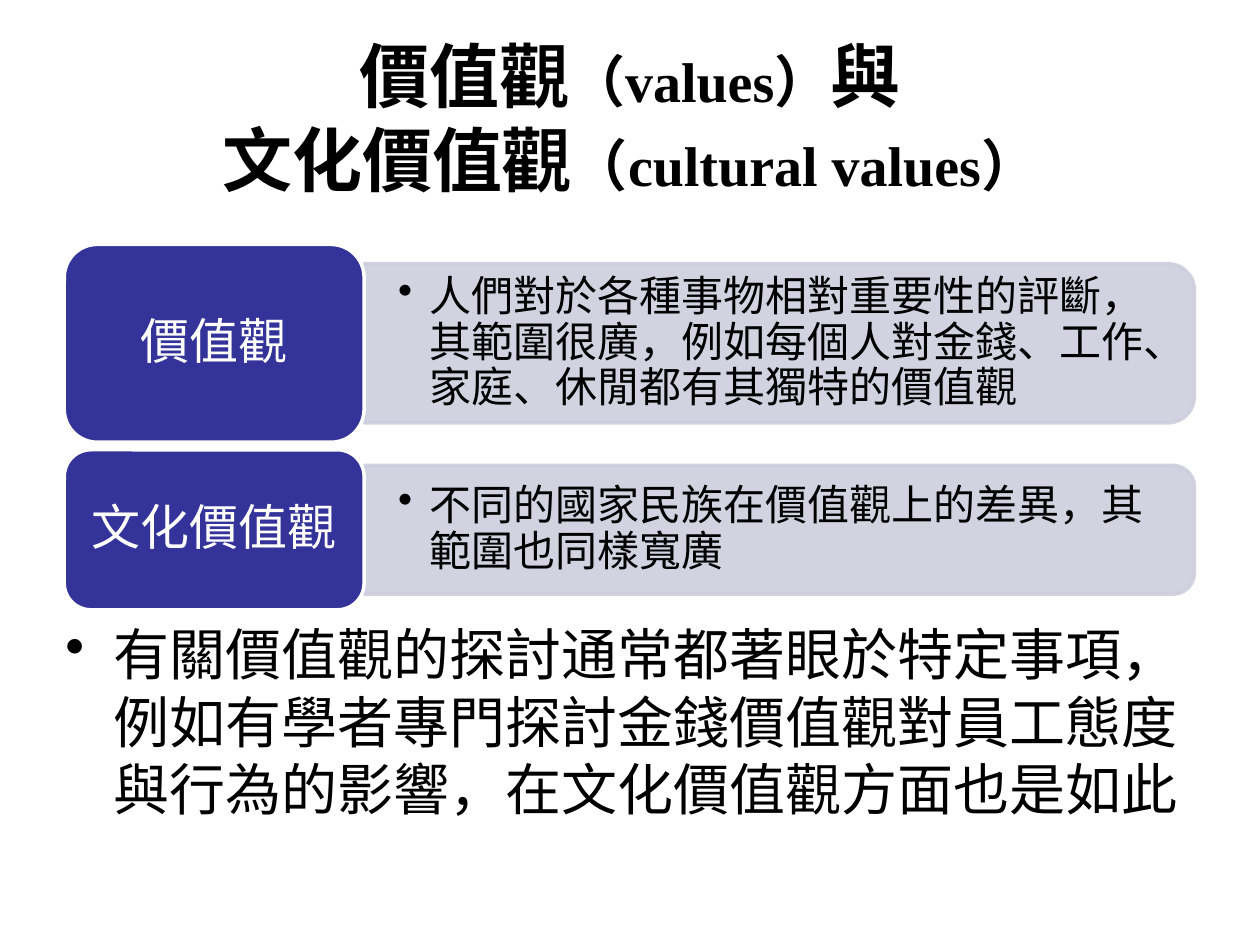
from pptx import Presentation
from pptx.dml.color import RGBColor
from pptx.enum.shapes import MSO_SHAPE
from pptx.enum.text import MSO_ANCHOR, PP_ALIGN
from pptx.oxml.ns import qn
from pptx.util import Inches, Pt
from lxml import etree

TITLE_LINES = [
    [("價值觀", 40), ("（values）", 32), ("與", 40)],
    [("文化價值觀", 40), ("（cultural values）", 32)],
]
CONCEPTS = [
    ("價值觀", "人們對於各種事物相對重要性的評斷，其範圍很廣，例如每個人對金錢、工作、家庭、休閒都有其獨特的價值觀", 1.57),
    ("文化價值觀", "不同的國家民族在價值觀上的差異，其範圍也同樣寬廣", 1.27),
]
REMARK = "有關價值觀的探討通常都著眼於特定事項，例如有學者專門探討金錢價值觀對員工態度與行為的影響，在文化價值觀方面也是如此"

BLACK = RGBColor(0, 0, 0)
WHITE = RGBColor(255, 255, 255)
INDIGO = RGBColor(0x33, 0x33, 0x99)
LAVENDER = RGBColor(0xCE, 0xCE, 0xDE)
SERIF, SANS = "Times New Roman", "Arial"
MIDDLE, CENTER = MSO_ANCHOR.MIDDLE, PP_ALIGN.CENTER
ROUNDED, ROUNDED_TOP = MSO_SHAPE.ROUNDED_RECTANGLE, MSO_SHAPE.ROUND_2_SAME_RECTANGLE

LEFT, TOP, GAP = 0.51, 1.94, 0.06
LABEL_WIDTH, PANEL_WIDTH, PANEL_SHARE = 2.38, 6.59, 0.805

prs = Presentation()
prs.slide_width, prs.slide_height = Inches(10), Inches(7.5)
slide = prs.slides.add_slide(prs.slide_layouts[6])


def style(font, size, face, color, bold=False):
    font.size, font.name, font.bold = Pt(size), face, bold
    font.color.rgb = color


def set_frame(frame, anchor, inset_x, inset_y):
    frame.word_wrap = True
    frame.vertical_anchor = anchor
    frame.margin_left = frame.margin_right = Inches(inset_x)
    frame.margin_top = frame.margin_bottom = Inches(inset_y)


def add_text(box, anchor=MSO_ANCHOR.TOP, inset_x=0.1, inset_y=0.05):
    frame = slide.shapes.add_textbox(*map(Inches, box)).text_frame
    set_frame(frame, anchor, inset_x, inset_y)
    return frame.paragraphs[0]


def add_bullet(paragraph, indent):
    props = paragraph._p.get_or_add_pPr()
    props.set("marL", str(Inches(indent)))
    props.set("indent", str(-Inches(indent)))
    etree.SubElement(props, qn("a:buChar")).set("char", "•")


def add_block(kind, box, fill, line, alpha=None):
    block = slide.shapes.add_shape(kind, *map(Inches, box))
    block.shadow.inherit = False
    block.fill.solid()
    block.fill.fore_color.rgb = fill
    block.line.color.rgb = line
    block.line.width = Pt(2)
    if alpha:
        for color in block._element.spPr.iter(qn("a:srgbClr")):
            etree.SubElement(color, qn("a:alpha")).set("val", str(alpha * 1000))
    return block


title = add_text((0.5, 0.3, 9, 1.25), MIDDLE)
title.alignment = CENTER
for number, line in enumerate(TITLE_LINES):
    if number:
        title.add_line_break()
    for words, size in line:
        run = title.add_run()
        run.text = words
        style(run.font, size, SERIF, BLACK, True)

panel_left = LEFT + LABEL_WIDTH
top = TOP
for name, meaning, height in CONCEPTS:
    panel_height = height * PANEL_SHARE
    middle = top + height / 2
    panel = add_block(
        ROUNDED_TOP,
        (panel_left + (PANEL_WIDTH - panel_height) / 2, middle - PANEL_WIDTH / 2, panel_height, PANEL_WIDTH),
        LAVENDER, LAVENDER, 90)
    panel.rotation = 90

    text_height = panel_height - 0.11
    detail = add_text((panel_left, middle - text_height / 2, 6.54, text_height), MIDDLE, 0.27, 0.14)
    detail.text = meaning
    detail.line_spacing = 0.9
    add_bullet(detail, 0.25)
    style(detail.font, 24, SANS, BLACK)

    label = add_block(ROUNDED, (LEFT, top, LABEL_WIDTH, height), INDIGO, WHITE)
    set_frame(label.text_frame, MIDDLE, 0.12, 0.06)
    caption = label.text_frame.paragraphs[0]
    caption.text = name
    caption.alignment = CENTER
    caption.line_spacing = 0.9
    style(caption.font, 28, SANS, WHITE)
    top += height + GAP

remark = add_text((0.42, 4.87, 9.15, 1.83))
remark.text = REMARK
add_bullet(remark, 0.38)
style(remark.font, 32, SERIF, BLACK)

prs.save("out.pptx")
